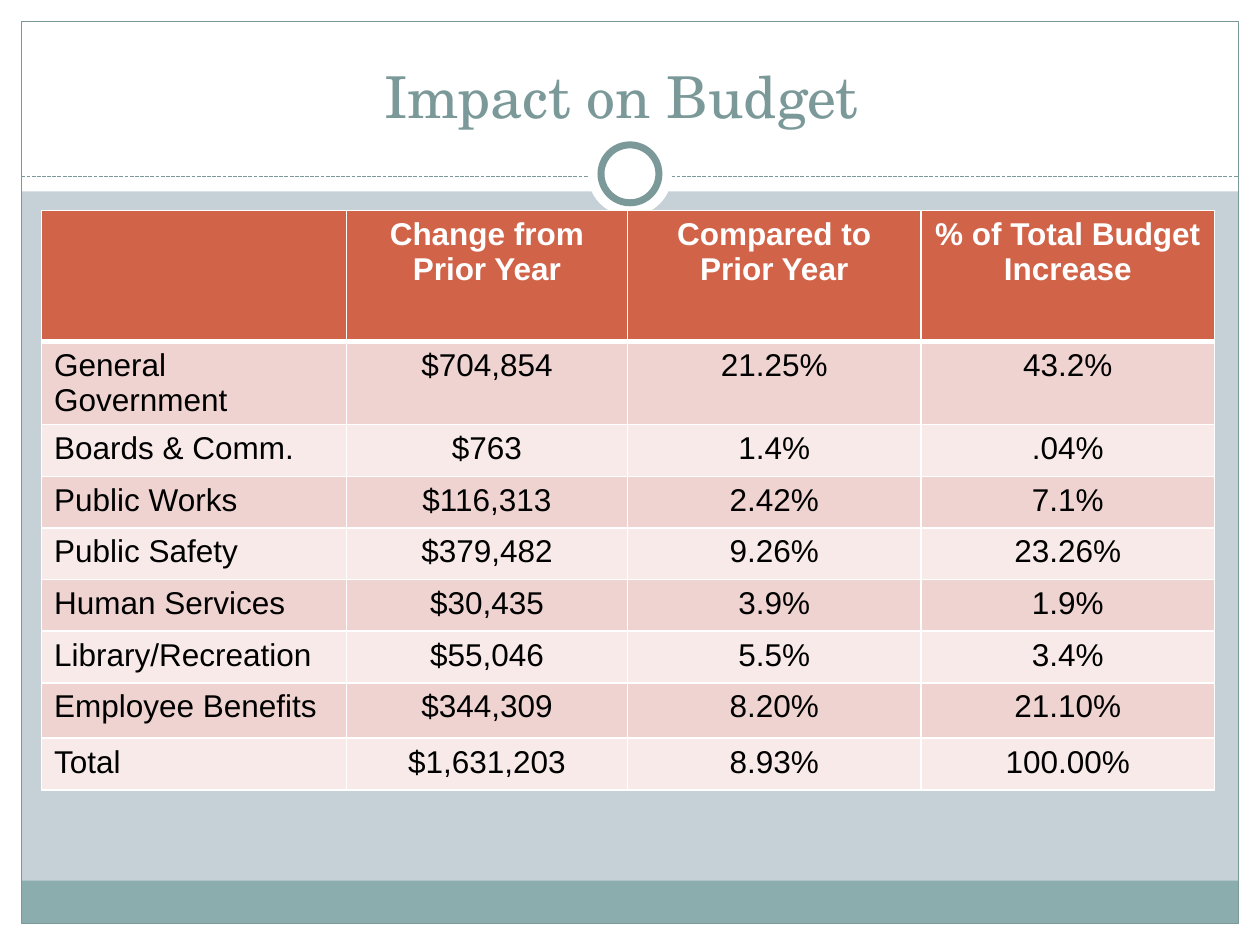
"""Build the budget impact slide: a framed title over a banded table."""
from dataclasses import dataclass

from lxml import etree
from pptx import Presentation
from pptx.dml.color import RGBColor
from pptx.enum.dml import MSO_LINE
from pptx.enum.shapes import MSO_CONNECTOR, MSO_SHAPE
from pptx.enum.text import MSO_ANCHOR, MSO_AUTO_SIZE, PP_ALIGN
from pptx.oxml.ns import qn
from pptx.util import Inches, Pt

RECTANGLE, OVAL = MSO_SHAPE.RECTANGLE, MSO_SHAPE.OVAL
STRAIGHT, DASH = MSO_CONNECTOR.STRAIGHT, MSO_LINE.SQUARE_DOT
LEFT, CENTER = PP_ALIGN.LEFT, PP_ALIGN.CENTER
BOTTOM, NO_FIT = MSO_ANCHOR.BOTTOM, MSO_AUTO_SIZE.NONE


@dataclass(frozen=True)
class Theme:
    """Colours, fonts and sizes of the slide."""
    background: str = "C5D1D7"
    paper: str = "FFFFFF"
    accent: str = "7C999A"
    footer: str = "8CADAE"
    header: str = "D16349"
    bands: tuple = ("EED3D0", "F7EAE9")
    ink: str = "000000"
    title_font: str = "TeX Gyre Schola"
    table_font: str = "Arial"
    title_size: int = 33
    table_size: int = 18
    thin: float = 0.75
    ring: int = 4
    grid: int = 1
    header_rule: int = 3


THEME = Theme()
TITLE = "Impact on Budget "
ROWS = [
    ("", "Change from Prior Year", "Compared to Prior Year", "% of Total Budget Increase"),
    ("General Government", "$704,854", "21.25%", "43.2%"),
    ("Boards & Comm.", "$763", "1.4%", ".04%"),
    ("Public Works", "$116,313", "2.42%", "7.1%"),
    ("Public Safety", "$379,482", "9.26%", "23.26%"),
    ("Human Services", "$30,435", "3.9%", "1.9%"),
    ("Library/Recreation", "$55,046", "5.5%", "3.4%"),
    ("Employee Benefits", "$344,309", "8.20%", "21.10%"),
    ("Total", "$1,631,203", "8.93%", "100.00%"),
]
COLUMN_WIDTHS = [2.42, 2.23, 2.33, 2.33]
ROW_HEIGHTS = [1.04, 0.66] + [0.41] * 5 + [0.44, 0.41]

WIDTH, HEIGHT = 10, 7.5
MARGIN = 0.17
INNER_WIDTH, INNER_HEIGHT = WIDTH - 2 * MARGIN, HEIGHT - 2 * MARGIN
TITLE_BAND, FOOTER_HEIGHT = 1.52, 0.34
RULE_Y, RING_Y = 1.4, 1.38
DISC, RING = 0.67, 0.46
TABLE_LEFT, TABLE_TOP = 0.33, 1.67
TITLE_BOX = (0.33, 0.25, 9.33, 0.83)


def color(value):
    return RGBColor.from_string(value)


def inches(values):
    return [Inches(value) for value in values]


def centered(size):
    return (WIDTH - size) / 2, RING_Y - size / 2, size, size


SHAPES = [
    (RECTANGLE, (0, HEIGHT - MARGIN, WIDTH, MARGIN), THEME.paper, None),
    (RECTANGLE, (0, 0, WIDTH, TITLE_BAND), THEME.paper, None),
    (RECTANGLE, (0, 0, MARGIN, HEIGHT), THEME.paper, None),
    (RECTANGLE, (WIDTH - MARGIN, 0, MARGIN, HEIGHT), THEME.paper, None),
    (RECTANGLE, (MARGIN, HEIGHT - MARGIN - FOOTER_HEIGHT, INNER_WIDTH, FOOTER_HEIGHT),
     THEME.footer, None),
    (RECTANGLE, (MARGIN, MARGIN, INNER_WIDTH, INNER_HEIGHT), None, THEME.thin),
]
RINGS = [
    (OVAL, centered(DISC), THEME.paper, None),
    (OVAL, centered(RING), THEME.paper, THEME.ring),
]


def add_shapes(page, shapes):
    for kind, place, fill, line_width in shapes:
        shape = page.shapes.add_shape(kind, *inches(place))
        shape.shadow.inherit = False
        if fill:
            shape.fill.solid()
            shape.fill.fore_color.rgb = color(fill)
        else:
            shape.fill.background()
        if line_width:
            shape.line.color.rgb = color(THEME.accent)
            shape.line.width = Pt(line_width)
        else:
            shape.line.fill.background()


def add_rule(page):
    ends = inches((MARGIN, RULE_Y, WIDTH - MARGIN, RULE_Y))
    rule = page.shapes.add_connector(STRAIGHT, *ends)
    rule.line.color.rgb = color(THEME.accent)
    rule.line.width = Pt(THEME.thin)
    rule.line.dash_style = DASH
    etree.SubElement(rule.element.spPr, qn("a:effectLst"))


def write(para, text, align, ink, **formats):
    para.alignment = align
    span = para.add_run()
    span.text = text
    span.font.color.rgb = color(ink)
    for name, value in formats.items():
        setattr(span.font, name, value)


def place_title(page):
    title = page.shapes.title
    title.left, title.top, title.width, title.height = inches(TITLE_BOX)
    frame = title.text_frame
    for name, value in {"word_wrap": True, "auto_size": NO_FIT,
                        "vertical_anchor": BOTTOM}.items():
        setattr(frame, name, value)
    write(frame.paragraphs[0], TITLE, CENTER, THEME.accent,
          name=THEME.title_font, size=Pt(THEME.title_size))
    title.element.getparent().append(title.element)


def set_borders(cell, row):
    properties = cell._tc.get_or_add_tcPr()
    widths = {"lnL": THEME.grid, "lnR": THEME.grid,
              "lnT": THEME.header_rule if row == 1 else THEME.grid,
              "lnB": THEME.header_rule if row == 0 else THEME.grid}
    for index, (side, width) in enumerate(widths.items()):
        border = etree.Element(qn(f"a:{side}"), w=str(Pt(width)))
        fill = etree.SubElement(border, qn("a:solidFill"))
        etree.SubElement(fill, qn("a:srgbClr"), val=THEME.paper)
        properties.insert(index, border)


def add_budget_table(page):
    place = (TABLE_LEFT, TABLE_TOP, sum(COLUMN_WIDTHS), sum(ROW_HEIGHTS))
    table = page.shapes.add_table(len(ROWS), len(COLUMN_WIDTHS), *inches(place)).table
    for column, width in zip(table.columns, COLUMN_WIDTHS):
        column.width = Inches(width)
    for row, (texts, height) in enumerate(zip(ROWS, ROW_HEIGHTS)):
        table.rows[row].height = Inches(height)
        header = row == 0
        fill = THEME.header if header else THEME.bands[(row - 1) % 2]
        for column, text in enumerate(texts):
            cell = table.cell(row, column)
            cell.fill.solid()
            cell.fill.fore_color.rgb = color(fill)
            set_borders(cell, row)
            if text:
                write(cell.text_frame.paragraphs[0], text, CENTER if column or header else LEFT,
                      THEME.paper if header else THEME.ink, name=THEME.table_font,
                      size=Pt(THEME.table_size), bold=header)


def main():
    deck = Presentation()
    deck.slide_width, deck.slide_height = inches((WIDTH, HEIGHT))
    page = deck.slides.add_slide(deck.slide_layouts.get_by_name("Title Only"))
    page.background.fill.solid()
    page.background.fill.fore_color.rgb = color(THEME.background)
    add_shapes(page, SHAPES)
    add_rule(page)
    add_shapes(page, RINGS)
    place_title(page)
    add_budget_table(page)
    deck.save("out.pptx")


if __name__ == "__main__":
    main()
